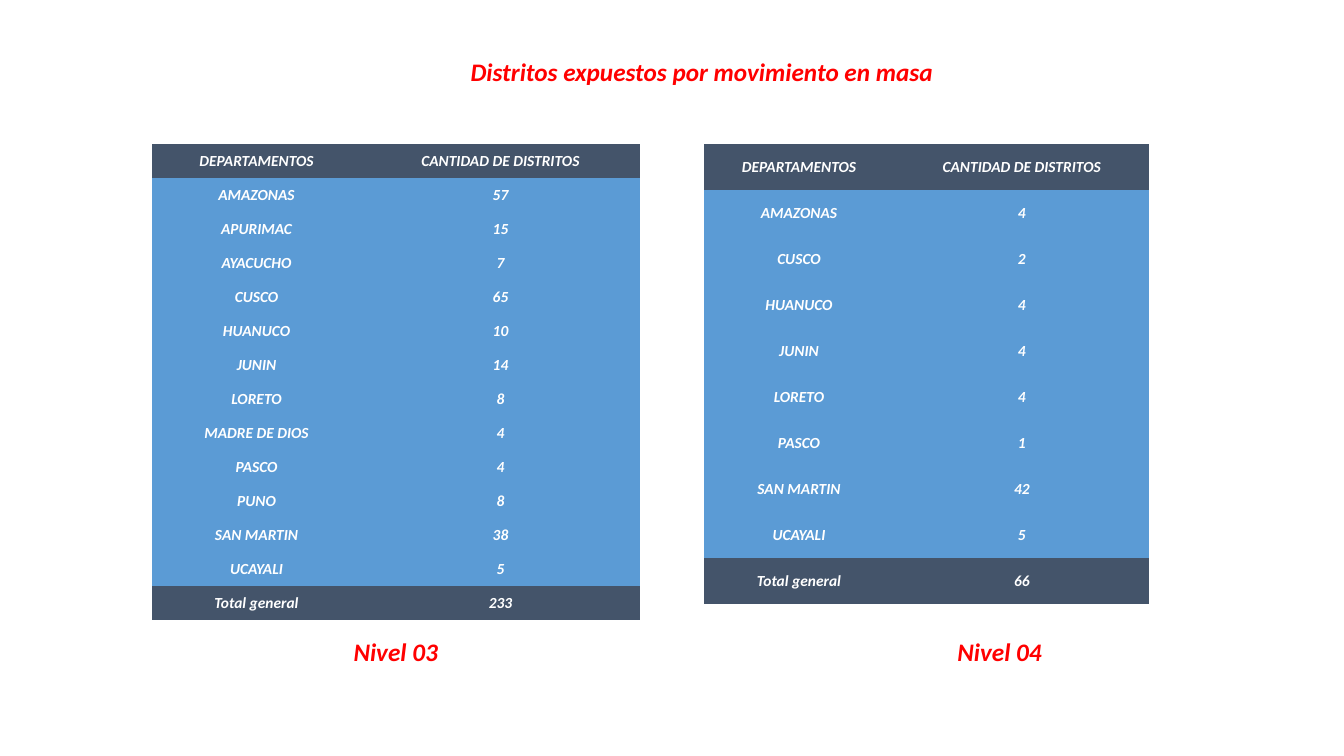
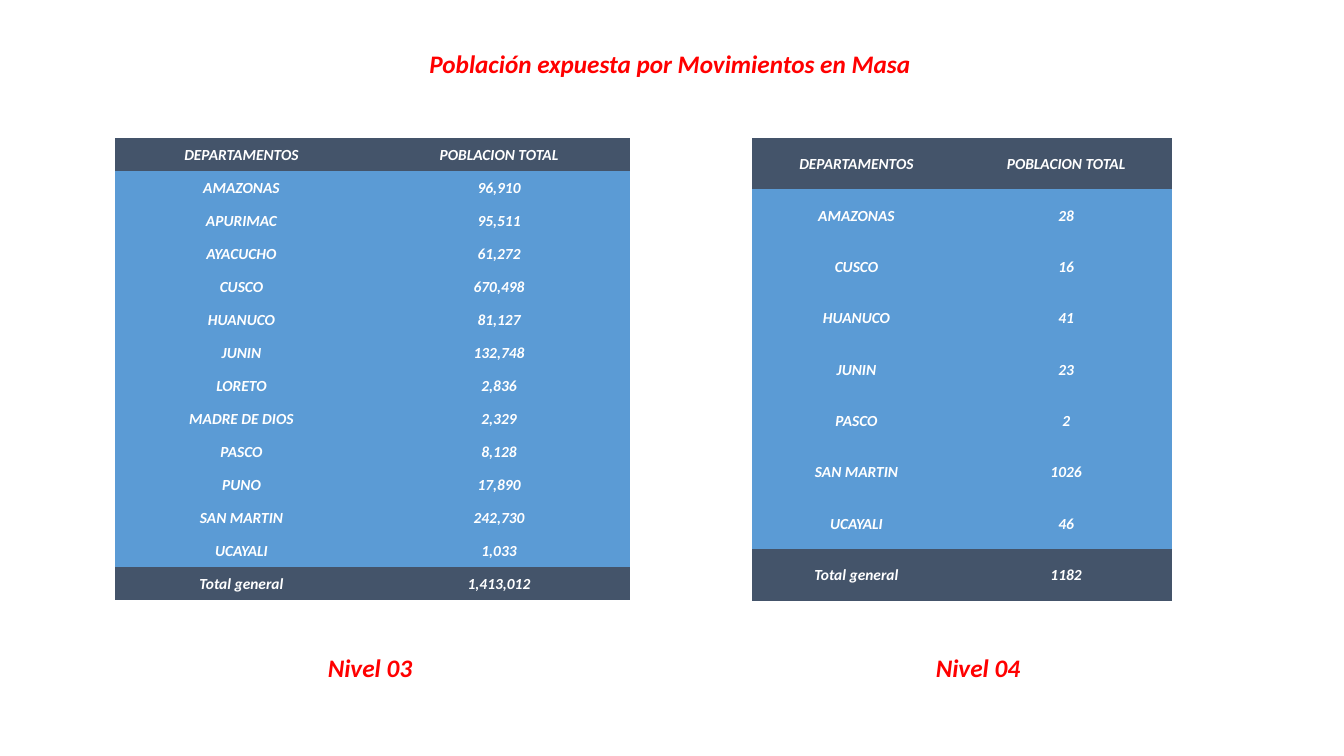
from dataclasses import dataclass

from pptx import Presentation, util as u
from pptx.dml.color import RGBColor
from pptx.enum import text as t
from pptx.oxml.ns import qn

PX = 9144  # EMU in one px, 100 px to the inch
SLIDE_WIDTH, SLIDE_HEIGHT = 1333, 750
TITLE_ONLY_LAYOUT = 5
NO_STYLE_NO_GRID = "{2D5ABB26-0587-4C30-8999-92F81FD0307C}"

FONT = "Calibri"
RED, WHITE = "FF0000", "FFFFFF"
BAND, BODY = "44546A", "5B9BD5"
LINE_HEIGHT = 40

Row = tuple[str, str]


@dataclass(frozen=True)
class Box:
    left: int
    top: int
    width: int
    height: int = LINE_HEIGHT

    def emu(self) -> list[u.Emu]:
        return [px(n) for n in (self.left, self.top, self.width, self.height)]


@dataclass(frozen=True)
class LevelTable:
    label: str
    label_box: Box
    box: Box
    first_column: int
    rows: list[Row]
    total: str


@dataclass(frozen=True)
class ExposureSlide:
    title: str
    title_box: Box
    value_header: str
    levels: list[LevelTable]


EXPOSURE_SLIDES = [
    ExposureSlide(
        "Distritos expuestos por movimiento en masa",
        Box(454, 51, 484),
        "CANTIDAD DE DISTRITOS",
        [
            LevelTable(
                "Nivel 03", Box(339, 626, 107), Box(151, 143, 484, 472), 207,
                [("AMAZONAS", "57"), ("APURIMAC", "15"), ("AYACUCHO", "7"),
                 ("CUSCO", "65"), ("HUANUCO", "10"), ("JUNIN", "14"),
                 ("LORETO", "8"), ("MADRE DE DIOS", "4"), ("PASCO", "4"),
                 ("PUNO", "8"), ("SAN MARTIN", "38"), ("UCAYALI", "5")],
                "233",
            ),
            LevelTable(
                "Nivel 04", Box(938, 626, 107), Box(698, 143, 442, 456), 189,
                [("AMAZONAS", "4"), ("CUSCO", "2"), ("HUANUCO", "4"),
                 ("JUNIN", "4"), ("LORETO", "4"), ("PASCO", "1"),
                 ("SAN MARTIN", "42"), ("UCAYALI", "5")],
                "66",
            ),
        ],
    ),
    ExposureSlide(
        "Población expuesta por Movimientos en Masa",
        Box(413, 43, 503),
        "POBLACION TOTAL",
        [
            LevelTable(
                "Nivel 03", Box(312, 642, 110), Box(114, 137, 511, 459), 251,
                [("AMAZONAS", "96,910"), ("APURIMAC", "95,511"),
                 ("AYACUCHO", "61,272"), ("CUSCO", "670,498"),
                 ("HUANUCO", "81,127"), ("JUNIN", "132,748"),
                 ("LORETO", "2,836"), ("MADRE DE DIOS", "2,329"),
                 ("PASCO", "8,128"), ("PUNO", "17,890"),
                 ("SAN MARTIN", "242,730"), ("UCAYALI", "1,033")],
                "1,413,012",
            ),
            LevelTable(
                "Nivel 04", Box(915, 642, 110), Box(746, 137, 416, 459), 207,
                [("AMAZONAS", "28"), ("CUSCO", "16"), ("HUANUCO", "41"),
                 ("JUNIN", "23"), ("PASCO", "2"), ("SAN MARTIN", "1026"),
                 ("UCAYALI", "46")],
                "1182",
            ),
        ],
    ),
]


def px(count: float) -> u.Emu:
    return u.Emu(round(count * PX))


def color(hex_code: str) -> RGBColor:
    return RGBColor.from_string(hex_code)


def write(frame, words: str, *, size: int = 18, hex_code: str = RED, wrap: bool = True) -> None:
    """Put one centred line of bold italic text in a text frame."""
    frame.word_wrap = wrap
    paragraph = frame.paragraphs[0]
    paragraph.alignment = t.PP_ALIGN.CENTER
    run = paragraph.add_run()
    run.text = words
    font = run.font
    font.name, font.size = FONT, u.Pt(size)
    font.bold = font.italic = True
    font.color.rgb = color(hex_code)


def add_title(slide, words: str, box: Box) -> None:
    title = slide.shapes.title
    title.left, title.top, title.width, title.height = box.emu()
    title.text_frame.auto_size = t.MSO_AUTO_SIZE.NONE
    write(title.text_frame, words, wrap=False)


def add_label(slide, words: str, box: Box) -> None:
    write(slide.shapes.add_textbox(*box.emu()).text_frame, words)


def fill_cell(cell, words: str, fill: str) -> None:
    cell.fill.solid()
    cell.fill.fore_color.rgb = color(fill)
    cell.vertical_anchor = t.MSO_ANCHOR.MIDDLE
    cell.margin_left = cell.margin_top = cell.margin_right = px(1)
    cell.margin_bottom = 0
    write(cell.text_frame, words, size=11, hex_code=WHITE)


def add_level_table(slide, level: LevelTable, value_header: str) -> None:
    rows = [("DEPARTAMENTOS", value_header), *level.rows, ("Total general", level.total)]
    frame = slide.shapes.add_table(len(rows), 2, *level.box.emu())
    for style in frame.element.iter(qn("a:tableStyleId")):
        style.text = NO_STYLE_NO_GRID
    table = frame.table
    table.first_row = table.horz_banding = False
    table.columns[0].width = px(level.first_column)
    table.columns[1].width = px(level.box.width - level.first_column)
    for index, values in enumerate(rows):
        table.rows[index].height = px(level.box.height / len(rows))
        fill = BAND if index in (0, len(rows) - 1) else BODY
        for column, words in enumerate(values):
            fill_cell(table.cell(index, column), words, fill)


def main() -> None:
    presentation = Presentation()
    presentation.slide_width = px(SLIDE_WIDTH)
    presentation.slide_height = px(SLIDE_HEIGHT)
    layout = presentation.slide_layouts[TITLE_ONLY_LAYOUT]
    for content in EXPOSURE_SLIDES:
        slide = presentation.slides.add_slide(layout)
        add_title(slide, content.title, content.title_box)
        for level in content.levels:
            add_label(slide, level.label, level.label_box)
            add_level_table(slide, level, content.value_header)
    presentation.save("out.pptx")


if __name__ == "__main__":
    main()
